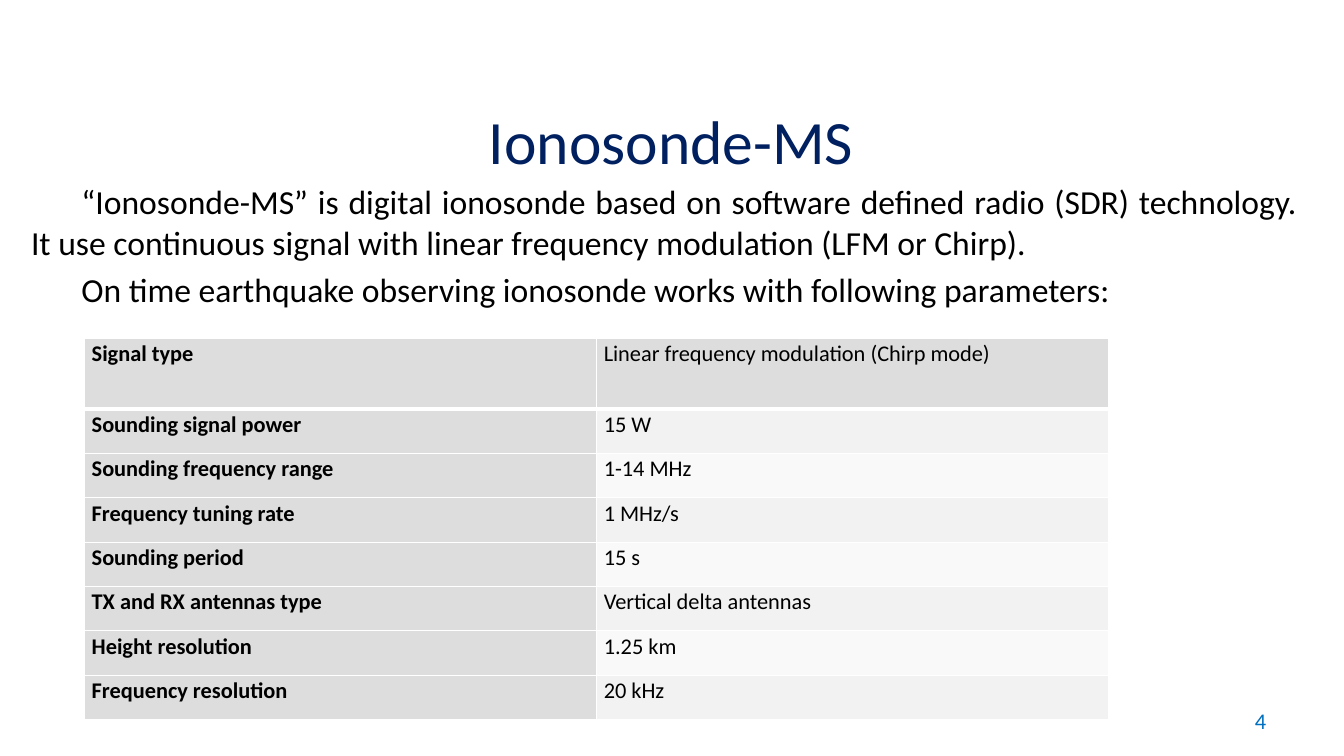
from lxml import etree
from pptx import Presentation
from pptx.dml.color import RGBColor
from pptx.enum import text as t
from pptx.oxml import ns
from pptx.util import Pt

TITLE = "Ionosonde-MS"
BODY = [
    "“Ionosonde-MS” is digital ionosonde based on software defined radio (SDR) technology. "
    "It use continuous signal with linear frequency modulation (LFM or Chirp).",
    "On time earthquake observing ionosonde works with following parameters:",
]
PARAMS = [
    ("Signal type", "Linear frequency modulation (Chirp mode)"),
    ("Sounding signal power", "15 W"),
    ("Sounding frequency range", "1-14 MHz"),
    ("Frequency tuning rate", "1 MHz/s"),
    ("Sounding period", "15 s"),
    ("TX and RX antennas type", "Vertical delta antennas"),
    ("Height resolution", "1.25 km"),
    ("Frequency resolution", "20 kHz"),
]
NUMBER = "4"
COLORS = {"title": "002060", "text": "000000", "number": "0070C0", "rule": "FFFFFF",
          "head": "DDDDDD", "odd": "F2F2F2", "even": "F9F9F9"}
FONT = "Calibri"
HEAD_H, ROW_H, COL_W = 50.4, 31.68, 365.76


def rgb(key):
    return RGBColor.from_string(COLORS[key])


def add_run(para, words, size, color, bold=False):
    run = para.add_run()
    run.text = words
    font = run.font
    font.name, font.size, font.bold = FONT, Pt(size), bold
    font.color.rgb = rgb(color)


def add_box(slide, area, paras, size, color, align, anchor=t.MSO_ANCHOR.TOP, indent=0):
    frame = slide.shapes.add_textbox(*map(Pt, area)).text_frame
    frame.word_wrap = True
    frame.vertical_anchor = anchor
    for i, words in enumerate(paras):
        para = frame.add_paragraph() if i else frame.paragraphs[0]
        para.alignment = align
        if indent:
            para._p.get_or_add_pPr().set("indent", str(Pt(indent)))
        if i:
            para.space_before = Pt(size * 0.2)
        add_run(para, words, size, color)


def add_rules(cell, widths):
    """Draw the cell's borders; widths are in points for left, right, top, bottom."""
    props = cell._tc.get_or_add_tcPr()
    for side, width in zip("LRTB", widths):
        line = etree.SubElement(props, ns.qn(f"a:ln{side}"), w=str(Pt(width)))
        fill = etree.SubElement(line, ns.qn("a:solidFill"))
        etree.SubElement(fill, ns.qn("a:srgbClr"), val=COLORS["rule"])


def add_params(slide):
    count = len(PARAMS)
    height = HEAD_H + ROW_H * (count - 1)
    table = slide.shapes.add_table(
        count, 2, Pt(60.5), Pt(241.9), Pt(2 * COL_W), Pt(height)).table
    table.first_row = table.horz_banding = False
    for col in table.columns:
        col.width = Pt(COL_W)
    for r, pair in enumerate(PARAMS):
        table.rows[r].height = Pt(ROW_H if r else HEAD_H)
        for c, words in enumerate(pair):
            cell = table.cell(r, c)
            add_rules(cell, (1, 1, 3 if r == 1 else 1, 1 if r else 3))
            cell.fill.solid()
            shade = "head" if r == 0 or c == 0 else "odd" if r % 2 else "even"
            cell.fill.fore_color.rgb = rgb(shade)
            cell.margin_left = cell.margin_right = Pt(5.04)
            cell.margin_top = cell.margin_bottom = Pt(0)
            para = cell.text_frame.paragraphs[0]
            para.alignment = t.PP_ALIGN.JUSTIFY
            para.line_spacing = 1.07
            add_run(para, words, 16, "text", c == 0)


def main():
    deck = Presentation()
    deck.slide_width, deck.slide_height = Pt(960), Pt(540)
    slide = deck.slides.add_slide(deck.slide_layouts[6])
    mid = t.MSO_ANCHOR.MIDDLE
    add_box(slide, (309.6, 54.7, 339.8, 90), [TITLE], 44, "title", t.PP_ALIGN.CENTER, mid)
    add_box(slide, (15.1, 126, 918.7, 393.8), BODY, 24, "text", t.PP_ALIGN.JUSTIFY, indent=36)
    add_params(slide)
    add_box(slide, (687.6, 500.4, 223.9, 28.8), [NUMBER], 16, "number", t.PP_ALIGN.RIGHT, mid)
    deck.save("out.pptx")


if __name__ == "__main__":
    main()
